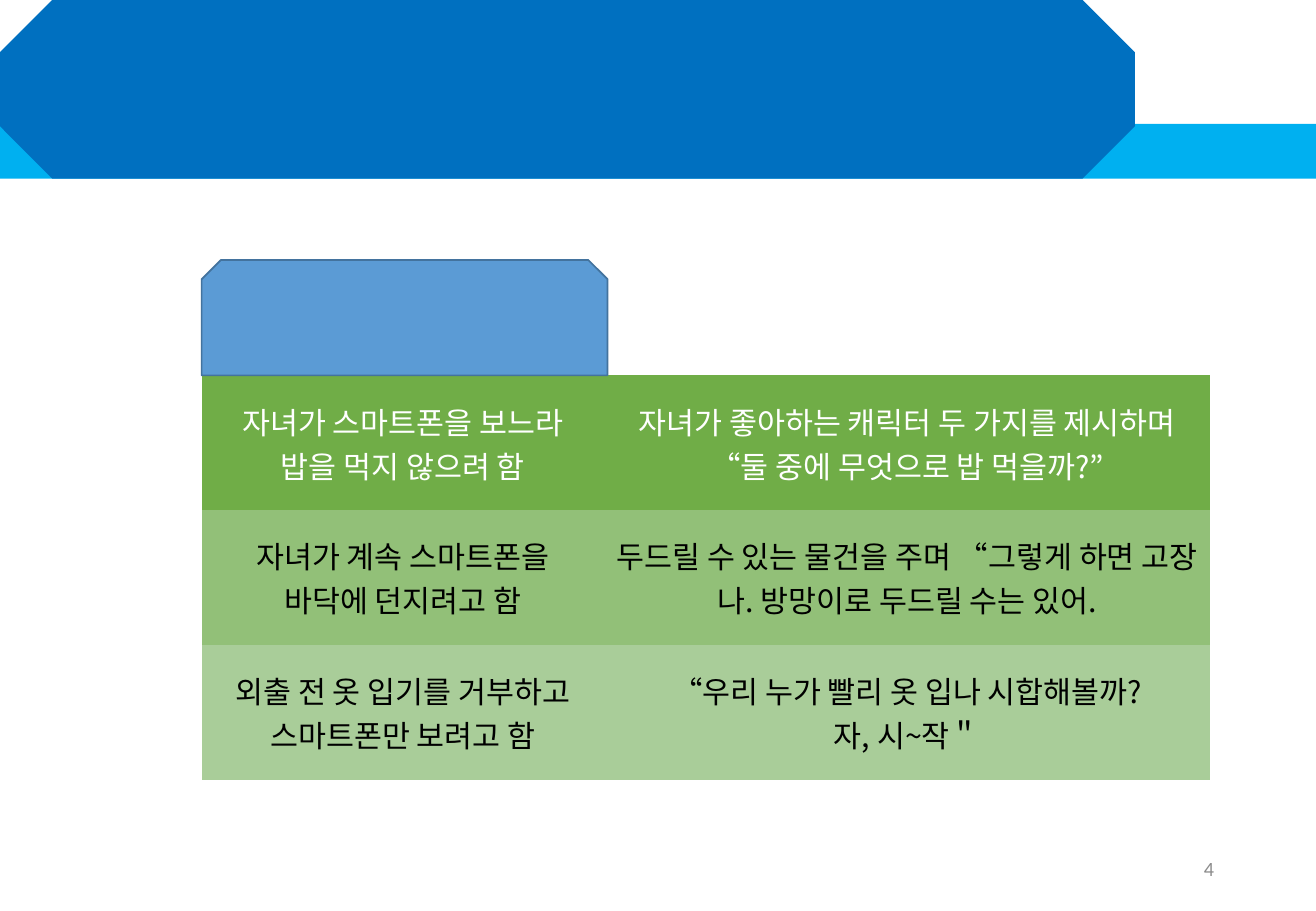
from dataclasses import dataclass

from lxml import etree
from pptx import Presentation
from pptx.dml.color import RGBColor
from pptx.enum.shapes import MSO_SHAPE
from pptx.enum.text import MSO_ANCHOR, PP_ALIGN
from pptx.oxml.ns import qn
from pptx.util import Inches, Pt


@dataclass(frozen=True)
class Theme:
    band: str = "00B0F0"
    banner: str = "0070C0"
    tab: str = "5B9BD5"
    tab_line: str = "43739E"
    rows: tuple = (("70AD47", "FFFFFF"), ("92C078", "000000"), ("A9CD99", "000000"))
    number: str = "8C8C8C"
    body_font: str = "Noto Sans CJK KR"
    number_font: str = "Calibri"
    body_size: int = 18
    number_size: int = 12


theme = Theme()


def add_block(kind, bounds, fill, line=None):
    shape = page.shapes.add_shape(kind, *map(Inches, bounds))
    shape.shadow.inherit = False
    shape.fill.solid()
    shape.fill.fore_color.rgb = RGBColor.from_string(fill)
    if line:
        shape.line.color.rgb = RGBColor.from_string(line)
        shape.line.width = Pt(1)
    else:
        shape.line.fill.background()


def write(frame, lines, align, name, size, color):
    """Fill a text frame with one formatted paragraph per line."""
    for index, line in enumerate(lines):
        para = frame.add_paragraph() if index else frame.paragraphs[0]
        para.alignment = align
        span = para.add_run()
        span.text = line
        for key, value in {"name": name, "size": Pt(size)}.items():
            setattr(span.font, key, value)
        span.font.color.rgb = RGBColor.from_string(color)
        etree.SubElement(span.font._element, qn("a:ea")).set("typeface", name)


deck = Presentation()
deck.slide_width, deck.slide_height = Inches(10.83), Inches(7.5)
page = deck.slides.add_slide(deck.slide_layouts[6])

# Header
add_block(MSO_SHAPE.RECTANGLE, (0, 1.02, 10.83, 0.45), theme.band)
add_block(MSO_SHAPE.OCTAGON, (0, 0, 9.34, 1.47), theme.banner)

# Situations on the left, what to say on the right
answers = [
    (["자녀가 스마트폰을 보느라", "밥을 먹지 않으려 함"],
     ["자녀가 좋아하는 캐릭터 두 가지를 제시하며 “둘 중에 무엇으로 밥 먹을까?”"]),
    (["자녀가 계속 스마트폰을 바닥에 던지려고 함"],
     ["두드릴 수 있는 물건을 주며 “그렇게 하면 고장 나. 방망이로 두드릴 수는 있어."]),
    (["외출 전 옷 입기를 거부하고", "스마트폰만 보려고 함"],
     ["“우리 누가 빨리 옷 입나 시합해볼까?", "자, 시~작＂"]),
]
table = page.shapes.add_table(
    len(answers), 2, Inches(1.66), Inches(3.09), Inches(8.3), Inches(3.33)).table
for column, width in zip(table.columns, (3.31, 4.99)):
    column.width = Inches(width)

# The plain style without grid lines leaves only the cell fills
table._tbl.tblPr.find(qn("a:tableStyleId")).text = "{2D5ABB26-0587-4C30-8999-92F81FD0307C}"
for row, texts, (fill, color) in zip(table.rows, answers, theme.rows):
    row.height = Inches(1.11)
    for cell, lines in zip(row.cells, texts):
        cell.fill.solid()
        cell.fill.fore_color.rgb = RGBColor.from_string(fill)
        cell.vertical_anchor = MSO_ANCHOR.MIDDLE
        write(cell.text_frame, lines, PP_ALIGN.CENTER,
              theme.body_font, theme.body_size, color)

# Page number
number_box = page.shapes.add_textbox(Inches(7.65), Inches(6.95), Inches(2.44), Inches(0.4))
number_box.text_frame.word_wrap = True
number_box.text_frame.vertical_anchor = MSO_ANCHOR.MIDDLE
write(number_box.text_frame, ["4"], PP_ALIGN.RIGHT,
      theme.number_font, theme.number_size, theme.number)

# Tab above the first column
add_block(MSO_SHAPE.SNIP_2_SAME_RECTANGLE, (1.66, 2.14, 3.34, 0.95),
          theme.tab, theme.tab_line)

deck.save("out.pptx")
